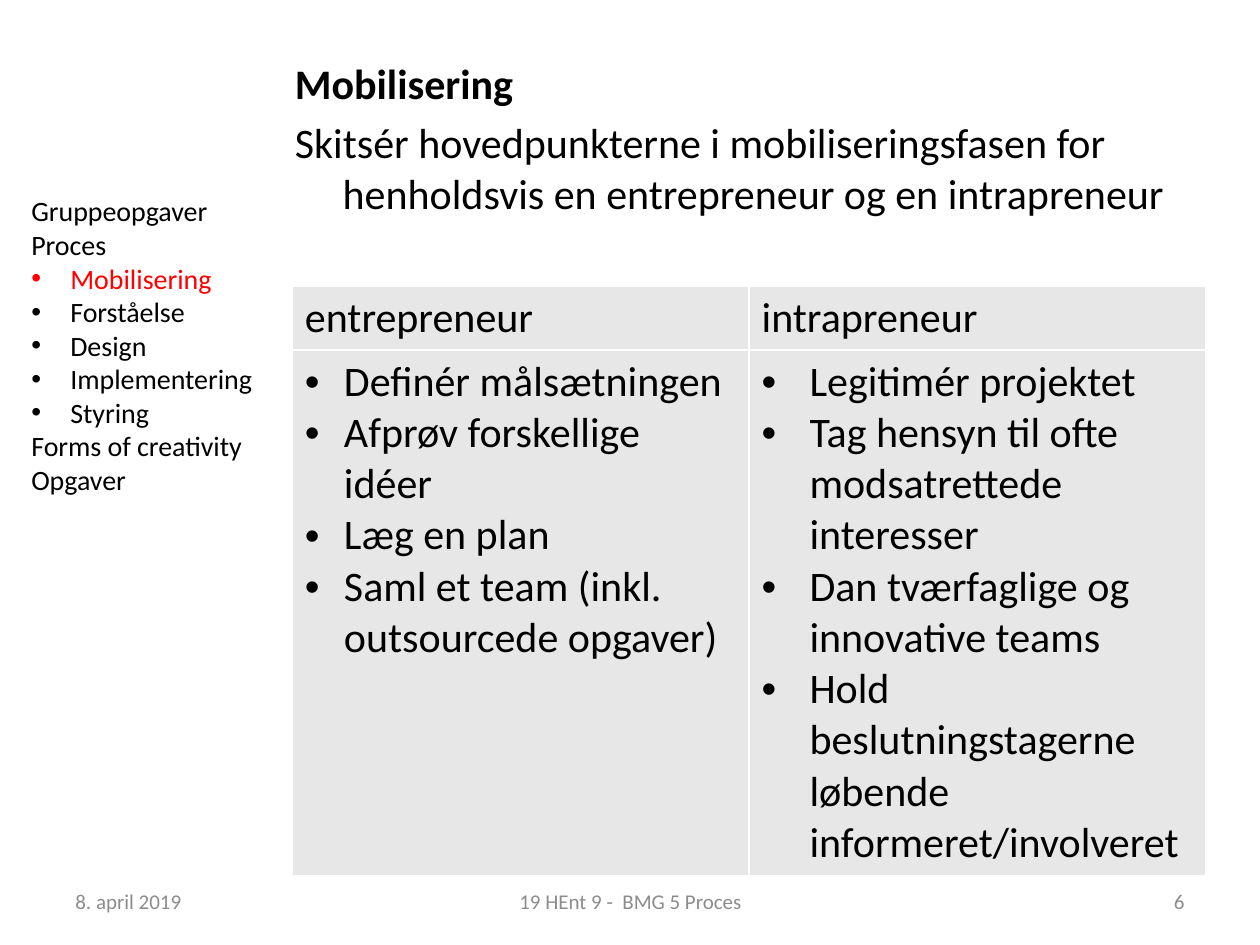
from pptx import Presentation
from pptx.dml.color import RGBColor
from pptx.enum.text import MSO_ANCHOR, PP_ALIGN
from pptx.oxml.xmlchemy import OxmlElement
from pptx.util import Inches, Pt

COLORS = {"ink": "000000", "mark": "FF0000", "cell": "E7E7E7",
          "rule": "FFFFFF", "foot": "8C8C8C"}


def write(frame, lines, size=24, color="ink", align=PP_ALIGN.LEFT, indent=0,
          bullets=(), bold=(), marked=(), before=0):
    """Fill a frame; bullets, bold and marked hold line numbers."""
    frame.word_wrap = True
    for i, line in enumerate(lines):
        para = frame.paragraphs[0] if i == 0 else frame.add_paragraph()
        para.alignment = align
        para.space_before = Pt(before)
        run = para.add_run()
        run.text = line
        font = run.font
        font.name, font.size, font.bold = "Calibri", Pt(size), i in bold
        font.color.rgb = RGBColor.from_string(COLORS["mark" if i in marked else color])
        props = para._p.get_or_add_pPr()
        hang = indent if i in bullets or before else 0
        props.set("marL", str(Inches(hang)))
        props.set("indent", str(-Inches(hang)))
        if i in bullets:
            face = OxmlElement("a:buFont")
            face.set("typeface", "Arial")
            props.append(face)
            mark = OxmlElement("a:buChar")
            mark.set("char", "•")
        else:
            mark = OxmlElement("a:buNone")
        props.append(mark)


def edge(cell):
    """Draw a thin rule on all four sides of a table cell."""
    props = cell._tc.get_or_add_tcPr()
    for at, side in enumerate(("a:lnL", "a:lnR", "a:lnT", "a:lnB")):
        line = OxmlElement(side)
        line.set("w", str(Pt(1)))
        fill = OxmlElement("a:solidFill")
        tint = OxmlElement("a:srgbClr")
        tint.set("val", COLORS["rule"])
        fill.append(tint)
        line.append(fill)
        props.insert(at, line)


deck = Presentation()
deck.slide_width, deck.slide_height = Inches(10), Inches(7.5)
slide = deck.slides.add_slide(deck.slide_layouts[1])
shapes = slide.shapes
title = shapes.title
title._element.getparent().remove(title._element)

# Task text
body = slide.placeholders[1]
body.left, body.top = Inches(2.24), Inches(0.41)
body.width, body.height = Inches(7.48), Inches(6.43)
write(body.text_frame,
      ["Mobilisering",
       "Skitsér hovedpunkterne i mobiliseringsfasen for henholdsvis en "
       "entrepreneur og en intrapreneur"],
      indent=0.38, bold=[0], before=4.8)

# Comparison table
columns = [
    ("entrepreneur", 0.31,
     ["Definér målsætningen", "Afprøv forskellige idéer", "Læg en plan",
      "Saml et team (inkl. outsourcede opgaver)"]),
    ("intrapreneur", 0.38,
     ["Legitimér projektet", "Tag hensyn til ofte modsatrettede interesser",
      "Dan tværfaglige og innovative teams",
      "Hold beslutningstagerne løbende informeret/involveret"]),
]
table = shapes.add_table(2, 2, Inches(2.32), Inches(2.27),
                         Inches(7.25), Inches(4.67)).table
table.first_row = table.horz_banding = False
table.rows[0].height, table.rows[1].height = Inches(0.5), Inches(4.17)
for col, (head, indent, points) in enumerate(columns):
    write(table.cell(0, col).text_frame, [head])
    write(table.cell(1, col).text_frame, points, indent=indent,
          bullets=range(len(points)))
for cell in table.iter_cells():
    cell.fill.solid()
    cell.fill.fore_color.rgb = RGBColor.from_string(COLORS["cell"])
    edge(cell)

# Agenda at the left
agenda = shapes.add_textbox(Inches(0.15), Inches(1.49), Inches(2.19), Inches(2.83))
write(agenda.text_frame,
      ["Gruppeopgaver", "Proces", "Mobilisering", "Forståelse", "Design",
       "Implementering", "Styring", "Forms of creativity", "Opgaver"],
      size=16, indent=0.31, bullets=range(2, 7), marked=[2])

# Footer
for left, width, text, align in [
        (0.5, 2.33, "8. april 2019", PP_ALIGN.LEFT),
        (3.42, 3.17, "19 HEnt 9 -  BMG 5 Proces", PP_ALIGN.CENTER),
        (7.17, 2.33, "6", PP_ALIGN.RIGHT)]:
    box = shapes.add_textbox(Inches(left), Inches(6.95), Inches(width), Inches(0.4))
    box.text_frame.vertical_anchor = MSO_ANCHOR.MIDDLE
    write(box.text_frame, [text], size=12, color="foot", align=align)

deck.save("out.pptx")
